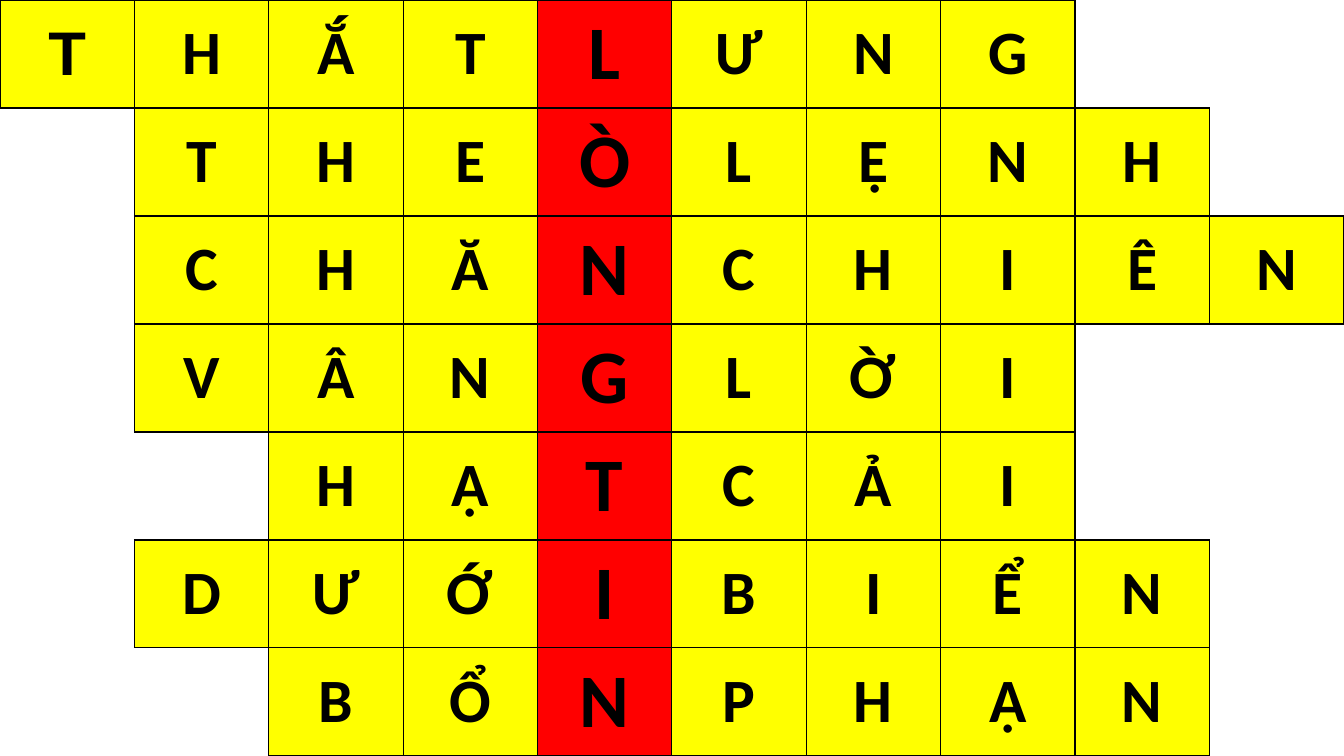
from lxml import etree
from pptx import Presentation
from pptx import util as u
from pptx.dml.color import RGBColor
from pptx.enum import text
from pptx.oxml.ns import qn

ANSWERS = [
    (0, "THẮTLƯNG"),
    (1, "THEÒLỆNH"),
    (1, "CHĂNCHIÊN"),
    (1, "VÂNGLỜI"),
    (2, "HẠTCẢI"),
    (1, "DƯỚIBIỂN"),
    (2, "BỔNPHẬN"),
]
COLUMNS, ROWS = 10, len(ANSWERS)
KEY_COLUMN = 4
WIDTH, HEIGHT = u.Inches(13.33), u.Inches(7.5)
YELLOW, RED, BLACK = "FFFF00", "FF0000", "000000"
EDGES = {"a:lnL": (0, -1), "a:lnR": (0, 1), "a:lnT": (-1, 0), "a:lnB": (1, 0)}
LETTERS = {
    (row, start + offset): letter
    for row, (start, answer) in enumerate(ANSWERS)
    for offset, letter in enumerate(answer)
}


def color(hex_string):
    return RGBColor.from_string(hex_string)


def set_borders(cell, row, column):
    properties = cell._tc.get_or_add_tcPr()
    for index, (tag, (down, right)) in enumerate(EDGES.items()):
        line = etree.Element(qn(tag), w=str(u.Pt(1)))
        if (row, column) in LETTERS or (row + down, column + right) in LETTERS:
            fill = etree.SubElement(line, qn("a:solidFill"))
            etree.SubElement(fill, qn("a:srgbClr"), val=BLACK)
        else:
            etree.SubElement(line, qn("a:noFill"))
        properties.insert(index, line)


def write_letter(cell, row, column):
    is_key = column == KEY_COLUMN
    cell.fill.solid()
    cell.fill.fore_color.rgb = color(RED if is_key else YELLOW)
    cell.vertical_anchor = text.MSO_ANCHOR.MIDDLE
    cell.text_frame.text = LETTERS[row, column]
    paragraph = cell.text_frame.paragraphs[0]
    paragraph.alignment = text.PP_ALIGN.CENTER
    font = paragraph.runs[0].font
    font.name = "Arial" if (row, column) == (0, 0) else "Calibri"
    font.size = u.Pt(54 if is_key else 44)
    font.bold = True
    font.color.rgb = color(BLACK)


def main():
    """Build the crossword slide with its highlighted key column."""
    presentation = Presentation()
    presentation.slide_width, presentation.slide_height = WIDTH, HEIGHT
    slide = presentation.slides.add_slide(presentation.slide_layouts[6])
    crossword = slide.shapes.add_table(ROWS, COLUMNS, 0, 0, WIDTH, HEIGHT).table
    crossword.first_row = crossword.horz_banding = False
    for row in range(ROWS):
        for column in range(COLUMNS):
            cell = crossword.cell(row, column)
            if (row, column) in LETTERS:
                write_letter(cell, row, column)
            else:
                cell.fill.background()
            set_borders(cell, row, column)
    presentation.save("out.pptx")


if __name__ == "__main__":
    main()
